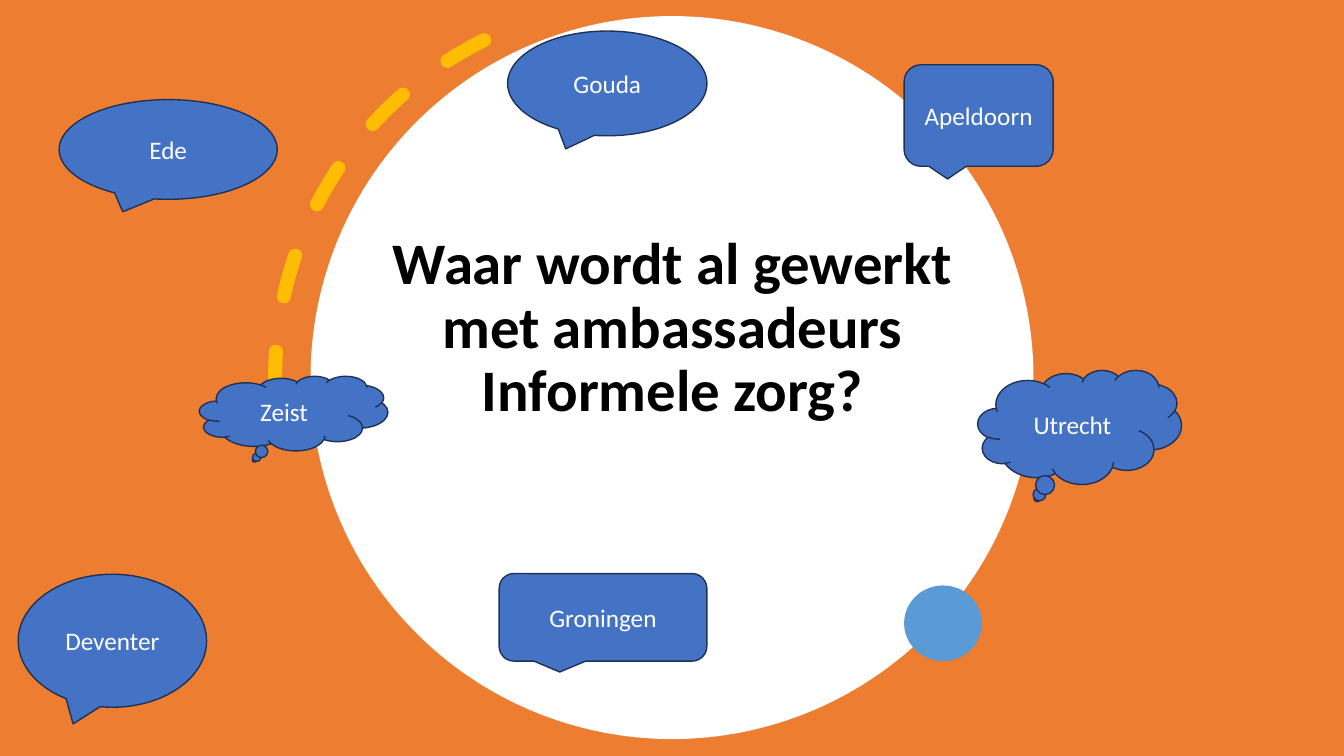
from lxml.etree import SubElement
from pptx import Presentation
from pptx.dml.color import RGBColor
from pptx.enum.dml import MSO_LINE
from pptx.enum.shapes import MSO_SHAPE
from pptx.enum.text import MSO_ANCHOR, PP_ALIGN
from pptx.oxml.ns import qn
from pptx.util import Pt

HUES = {
    "back": "ED7D31",
    "disc": "FFFFFF",
    "title": "000000",
    "arc": "FFC000",
    "dot": "5B9BD5",
    "call": "4472C4",
    "edge": "1E3256",
    "label": "FFFFFF",
}
OVAL = MSO_SHAPE.OVAL_CALLOUT
ROUND = MSO_SHAPE.ROUNDED_RECTANGULAR_CALLOUT
CLOUD = MSO_SHAPE.CLOUD_CALLOUT

# kind, city, left, top, width, height
CITIES = [
    (OVAL, "Deventer", 13, 410.2, 134.6, 95),
    (OVAL, "Gouda", 362.6, 22.2, 142.4, 74.8),
    (ROUND, "Groningen", 356.6, 409.7, 148.3, 62.5),
    (ROUND, "Apeldoorn", 645.8, 46.3, 106.5, 72.5),
    (OVAL, "Ede", 42.3, 71.2, 155.8, 71.2),
    (CLOUD, "Utrecht", 698.4, 264.3, 145.5, 81.5),
    (CLOUD, "Zeist ", 142.5, 268.6, 134.6, 53.3),
]


def hue(name):
    return RGBColor.from_string(HUES[name])


class Painter:
    def __init__(self, slide, font):
        self.slide = slide
        self.font = font

    def shape(self, kind, box, fill=None):
        item = self.slide.shapes.add_shape(kind, *map(Pt, box))
        item.shadow.inherit = False
        if fill:
            item.fill.solid()
            item.fill.fore_color.rgb = hue(fill)
        else:
            item.fill.background()
        item.line.fill.background()
        return item

    def label(self, frame, text, size, color, anchor, bold=False):
        frame.word_wrap = True
        frame.vertical_anchor = anchor
        para = frame.paragraphs[0]
        para.alignment = PP_ALIGN.CENTER
        run = para.add_run()
        run.text = text
        run.font.name = self.font
        run.font.size = Pt(size)
        run.font.bold = bold
        run.font.color.rgb = hue(color)
        return para

    def title(self, box, text):
        frame = self.slide.shapes.add_textbox(*map(Pt, box)).text_frame
        para = self.label(frame, text, 42, "title", MSO_ANCHOR.BOTTOM, True)
        para.line_spacing = 0.9

    def callout(self, kind, city, *box):
        item = self.shape(kind, box, "call")
        item.line.color.rgb = hue("edge")
        item.line.width = Pt(1)
        self.label(item.text_frame, city, 18, "label", MSO_ANCHOR.MIDDLE)

    def arc(self, box, start, end, turn):
        """Draw a mirrored, dashed arc with round caps; angles in degrees."""
        item = self.shape(MSO_SHAPE.ARC, box)
        # Angles are stored in 1/60000 degree, adjustments in 1/100000.
        for spot, angle in enumerate((start, end)):
            item.adjustments[spot] = angle * 0.6
        item.rotation = turn
        item.element.spPr.find(qn("a:xfrm")).set("flipV", "1")
        item.line.color.rgb = hue("arc")
        item.line.width = Pt(10)
        item.line.dash_style = MSO_LINE.DASH
        line = item.element.spPr.find(qn("a:ln"))
        line.set("cap", "rnd")
        tint = line.find(".//" + qn("a:srgbClr"))
        SubElement(tint, qn("a:alpha"), val="95000")


def main():
    deck = Presentation()
    deck.slide_width, deck.slide_height = Pt(960), Pt(540)
    slide = deck.slides.add_slide(deck.slide_layouts[6])
    paint = Painter(slide, "Calibri")

    paint.shape(MSO_SHAPE.RECTANGLE, (0, 0, 960, 540), "back")
    paint.shape(MSO_SHAPE.OVAL, (221.8, 11.5, 516.4, 516.4), "disc")
    paint.title((261.4, 108.7, 437.8, 198),
                "Waar wordt al gewerkt met ambassadeurs Informele zorg?")
    paint.arc((196.5, 0.9, 536.2, 536.2), 270, 334.89, 153.7)
    paint.shape(MSO_SHAPE.OVAL, (645.8, 418.2, 55.6, 54), "dot")
    for city in CITIES:
        paint.callout(*city)
    deck.save("out.pptx")


if __name__ == "__main__":
    main()
